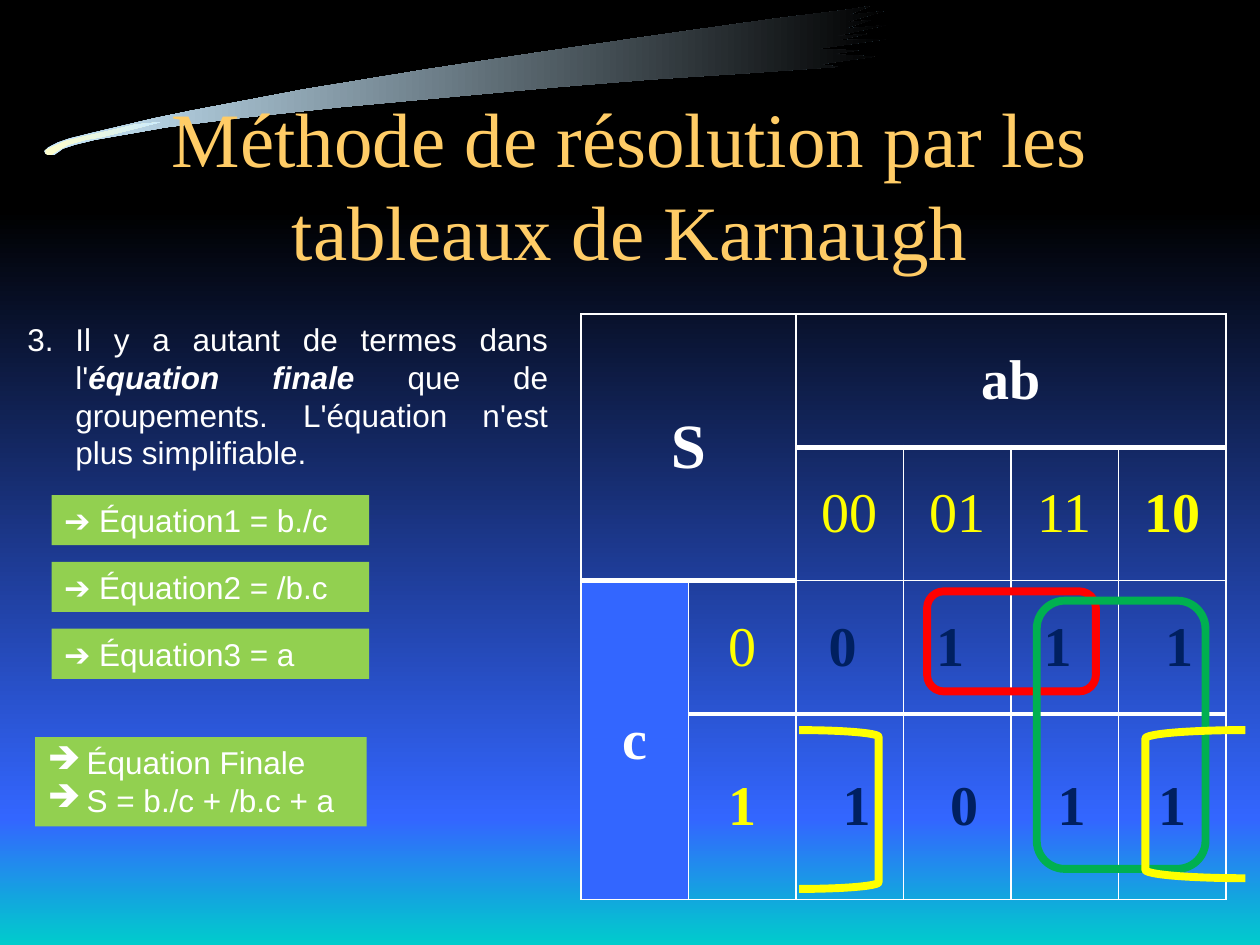
from lxml import etree
from pptx import Presentation
from pptx.dml.color import RGBColor
from pptx.enum.shapes import MSO_SHAPE
from pptx.enum.text import MSO_ANCHOR, MSO_AUTO_SIZE, PP_ALIGN
from pptx.oxml.ns import qn
from pptx.util import Inches, Pt

RECT, ROUND = MSO_SHAPE.RECTANGLE, MSO_SHAPE.ROUNDED_RECTANGLE
OPEN, CLOSE = MSO_SHAPE.LEFT_BRACKET, MSO_SHAPE.RIGHT_BRACKET
MID, TOP = MSO_ANCHOR.MIDDLE, MSO_ANCHOR.TOP
LEFT, CENTER, JUST = PP_ALIGN.LEFT, PP_ALIGN.CENTER, PP_ALIGN.JUSTIFY
GROW = MSO_AUTO_SIZE.SHAPE_TO_FIT_TEXT
SERIF, SANS = "Times New Roman", "Arial"
WHITE, YELLOW, NAVY, BLUE = "FFFFFF", "FFFF00", "002060", "3366FF"
COL, ROW = Inches(10) / 100, Inches(7.5) / 75

SWEEP = [
    (665, 53), (650, 51), (694, 45), (660, 43), (681, 40), (647, 39), (703, 31),
    (664, 32), (688, 27), (661, 29), (703, 20), (669, 23), (691, 16), (670, 18),
    (701, 9), (673, 12), (690, 5), (671, 8), (614, 15), (528, 27), (425, 42),
    (339, 55), (241, 71), (151, 88), (122, 94), (71, 106), (55, 110), (46, 113),
    (38, 117), (35, 120), (36, 122), (38, 123), (43, 123), (50, 118), (59, 115),
    (75, 111), (98, 107), (132, 101), (187, 94), (270, 85), (335, 79), (443, 69),
    (517, 63), (594, 58)]
TIP = [
    (36, 119), (45, 115), (52, 112), (64, 109), (86, 104), (107, 99), (127, 97),
    (108, 102), (80, 109), (68, 111), (54, 115), (47, 119), (41, 123), (38, 123),
    (36, 122)]
CELLS = [
    ["S", "", "ab", "", "", ""],
    ["", "", "00", "01", "11", "10"],
    ["c", "0", "0 ", "1 ", "1 ", " 1"],
    ["", "1", " 1", " 0", " 1", "1"]]
SPANS = [(0, 0, 1, 1), (0, 2, 0, 5), (2, 0, 3, 0)]
PLAIN = [(1, 2), (1, 3), (1, 4), (2, 1)]
HEAVY = [(1, c) for c in range(2, 6)] + [(2, 0), (2, 1)] + [(3, c) for c in range(1, 6)]
LOOPS = [
    (ROUND, "FF0000", 3.22, 2.08, 1.57, 0.75),
    (ROUND, "00B050", 4.24, 2.15, 1.57, 2.01),
    (OPEN, YELLOW, 5.25, 3.12, 0.93, 1.11),
    (CLOSE, YELLOW, 2.03, 3.12, 0.74, 1.19)]


def hue(code):
    """Turn a hex string into a colour."""
    return RGBColor.from_string(code)


def area(x, y, w, h):
    """Turn grid columns and rows into a box."""
    return [int(v) for v in (x * COL, y * ROW, w * COL, h * ROW)]


def blend(shape, ends, angle):
    """Fill a shape with a two-colour gradient and no line."""
    shape.shadow.inherit = False
    shape.line.fill.background()
    shape.fill.gradient()
    shape.fill.gradient_angle = angle
    for stop, code in zip(shape.fill.gradient_stops, ends):
        stop.color.rgb = hue(code)


def write(para, text, size, face, code, align=LEFT, **style):
    """Add one styled run to a paragraph."""
    para.alignment = align
    run = para.add_run()
    run.text = text
    look = {"size": Pt(size), "name": face, "bold": False, **style}
    for key, value in look.items():
        setattr(run.font, key, value)
    run.font.color.rgb = hue(code)


def bullet(para, inch, tag, **marks):
    """Give a paragraph a hanging bullet or number."""
    props = para._p.get_or_add_pPr()
    props.set("marL", str(Inches(inch)))
    props.set("indent", str(-Inches(inch)))
    etree.SubElement(props, qn(tag), **marks)


def frame(shape, anchor=TOP, size=GROW):
    """Set up the text frame of a shape."""
    text = shape.text_frame
    for key, value in {"word_wrap": True, "vertical_anchor": anchor, "auto_size": size}.items():
        setattr(text, key, value)
    return text


def scene(slide, box):
    """Paint the night sky and its comet over the box."""
    x, y, w, h = box
    slide.background.fill.solid()
    slide.background.fill.fore_color.rgb = hue("000000")
    for top, part, ends in [(16.7, 48.3, ("000000", BLUE)), (65, 10, (BLUE, "00CCCC"))]:
        band = slide.shapes.add_shape(RECT, x, int(y + top * h / 75), w, int(part * h / 75))
        blend(band, ends, 270)
    for dots, ends in [(SWEEP, ("CCECFF", "000000")), (TIP, ("FFFFCC", "CCECFF"))]:
        path = slide.shapes.build_freeform(*dots[0], scale=w / 1000)
        path.add_line_segments(dots[1:])
        blend(path.convert_to_shape(x, y), ends, 0)


def title(slide, box):
    """Write the heading."""
    text = frame(slide.shapes.add_textbox(*box), MID, MSO_AUTO_SIZE.NONE)
    write(text.paragraphs[0], "Méthode de résolution par les tableaux de Karnaugh",
          44, SERIF, "FFCC66", CENTER)


def edges(cell, row, col):
    """Draw the four borders of a cell."""
    props = cell._tc.get_or_add_tcPr()
    sides = {"L": 1, "R": 1, "T": 3 if (row, col) in HEAVY else 1,
             "B": 3 if (row + 1, col) in HEAVY else 1}
    for spot, (side, width) in enumerate(sides.items()):
        line = etree.Element(qn("a:ln" + side), w=str(Pt(width)))
        fill = etree.SubElement(line, qn("a:solidFill"))
        etree.SubElement(fill, qn("a:srgbClr"), val=WHITE)
        props.insert(spot, line)


def ink(row, col):
    """Choose the text colour of a cell."""
    if row == 0 or col == 0:
        return WHITE
    return YELLOW if row == 1 or col == 1 else NAVY


def grid(slide, box):
    """Build the Karnaugh table and loop its groups."""
    x, y, w, h = box
    wide, tall = w / 6, h / 4.39
    table = slide.shapes.add_table(4, 6, *box).table
    table.first_row = table.horz_banding = False
    for col in table.columns:
        col.width = int(wide)
    for row, share in zip(table.rows, (1, 1, 1, 1.39)):
        row.height = int(share * tall)
    for top, left, low, right in SPANS:
        table.cell(top, left).merge(table.cell(low, right))
    for r, line in enumerate(CELLS):
        for c, text in enumerate(line):
            cell = table.cell(r, c)
            look = {"vertical_anchor": MID, "margin_left": Inches(0.07),
                    "margin_right": Inches(0.07), "margin_top": 0, "margin_bottom": 0}
            for key, value in look.items():
                setattr(cell, key, value)
            if c == 0 and r > 1:
                cell.fill.solid()
                cell.fill.fore_color.rgb = hue(BLUE)
            else:
                cell.fill.background()
            edges(cell, r, c)
            if text:
                write(cell.text_frame.paragraphs[0], text, 36 if text == "S" else 32,
                      SERIF, ink(r, c), CENTER, bold=(r, c) not in PLAIN)
    for kind, code, left, top, cols, rows in LOOPS:
        loop = slide.shapes.add_shape(kind, int(x + left * wide), int(y + top * tall),
                                      int(cols * wide), int(rows * tall))
        loop.shadow.inherit = False
        loop.fill.background()
        loop.line.color.rgb = hue(code)
        loop.line.width = Pt(4.5)


def note(slide, box):
    """Write the numbered rule."""
    para = frame(slide.shapes.add_textbox(*box)).paragraphs[0]
    para.space_before = Pt(2.1)
    bullet(para, 0.38, "a:buAutoNum", type="arabicPeriod", startAt="3")
    for text, strong in [("Il y a autant de termes dans l'", False), ("équation finale", True),
                         (" que de groupements. L'équation n'est plus simplifiable.", False)]:
        write(para, text, 18, SANS, WHITE, JUST, bold=strong, italic=strong)


def label(slide, box, lines, listed=False):
    """Place one green label holding the lines."""
    shape = slide.shapes.add_shape(RECT, *box)
    shape.shadow.inherit = False
    shape.fill.solid()
    shape.fill.fore_color.rgb = hue("92D050")
    shape.line.fill.background()
    text = frame(shape)
    for spot, line in enumerate(lines):
        para = text.add_paragraph() if spot else text.paragraphs[0]
        if listed:
            bullet(para, 0.31, "a:buChar", char="➔")
        write(para, line, 18, SANS, WHITE)


def terms(slide, box, lines):
    """Stack one label per equation in the box."""
    x, y, w, h = box
    step = h / len(lines)
    for spot, line in enumerate(lines):
        label(slide, (x, int(y + spot * step), w, int(0.75 * step)), [line])


def main():
    """Build the slide and save it."""
    deck = Presentation()
    deck.slide_width, deck.slide_height = Inches(10), Inches(7.5)
    slide = deck.slides.add_slide(deck.slide_layouts[6])
    scene(slide, area(0, 0, 100, 75))
    title(slide, area(7.5, 8.3, 85, 12.5))
    grid(slide, area(4.61 * 10, 24.9, 51.2, 46.5))
    note(slide, area(1.2, 24.9, 43.3, 13.1))
    terms(slide, area(4.1, 39.3, 25.2, 15.9),
          ["➔ Équation1 = b./c", "➔ Équation2 = /b.c", "➔ Équation3 = a"])
    label(slide, area(2.8, 58.5, 26.3, 7.1), ["Équation Finale", "S = b./c + /b.c + a"], True)
    deck.save("out.pptx")


if __name__ == "__main__":
    main()
